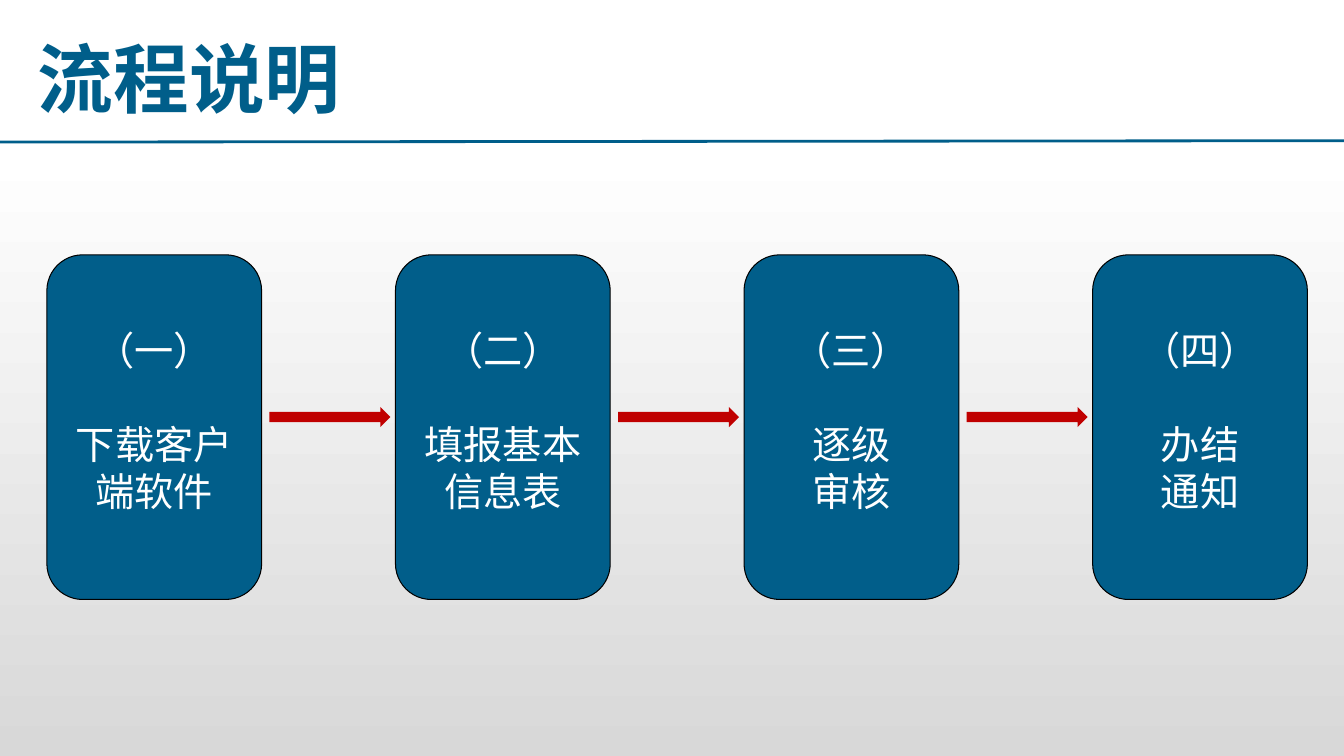
from pptx import Presentation
from pptx.dml.color import RGBColor
from pptx.enum.shapes import MSO_CONNECTOR as Connector, MSO_SHAPE as Shape
from pptx.enum.text import MSO_ANCHOR as Anchor, PP_ALIGN as Align
from pptx.oxml.ns import qn
from pptx.util import Pt
from lxml.etree import SubElement

TITLE_BLUE = RGBColor(0x00, 0x5E, 0x8A)
CARD_BLUE = RGBColor(0x01, 0x5E, 0x8A)
ARROW_RED = RGBColor(0xC0, 0x00, 0x00)
BLACK = RGBColor(0x00, 0x00, 0x00)
WHITE = RGBColor(0xFF, 0xFF, 0xFF)
GREY = RGBColor(0xD8, 0xD8, 0xD8)

WIDTH, HEIGHT = 960, 540
CARD_W, CARD_H, CARD_PITCH = 153.4, 246.2, 249
CAPTION_W, CAPTION_H, CAPTION_DROP = 126.7, 164.9, 26
ARROW_W, ARROW_H, ARROW_OFFSET, ARROW_DROP = 86.4, 14.4, 159, 108.7

TITLE_FONT = {"name": "Noto Sans CJK SC", "size": Pt(54), "bold": True}
CAPTION_FONT = {"name": "Arial", "size": Pt(28)}
TITLE_FRAME = {"word_wrap": True, "vertical_anchor": Anchor.BOTTOM}
CAPTION_FRAME = {"word_wrap": True, "margin_top": Pt(25)}

STEPS = [
    ("（一）", "下载客户端软件"),
    ("（二）", "填报基本", "信息表"),
    ("（三）", "逐级", "审核"),
    ("（四）", "办结", "通知"),
]


def apply(target, values):
    for name, value in values.items():
        setattr(target, name, value)


def add_text(slide, box, lines, frame_format, font_format, color, align):
    frame = slide.shapes.add_textbox(*map(Pt, box)).text_frame
    apply(frame, frame_format)
    frame.text = "\n".join(lines)
    for paragraph in frame.paragraphs:
        paragraph.alignment = align
        run = paragraph.runs[0]
        apply(run.font, font_format)
        run.font.color.rgb = color
        SubElement(run.font._element, qn("a:ea"), typeface=TITLE_FONT["name"])
    return frame


def add_solid(slide, kind, box, color):
    solid = slide.shapes.add_shape(kind, *map(Pt, box))
    solid.shadow.inherit = False
    solid.fill.solid()
    solid.fill.fore_color.rgb = color
    solid.line.fill.background()
    return solid


def paint_background(slide):
    fill = slide.background.fill
    fill.gradient()
    fill.gradient_angle = 270
    for stop, position, color in zip(fill.gradient_stops, (0.2, 1), (WHITE, GREY)):
        stop.position = position
        stop.color.rgb = color


def add_header(slide, left, top, width, height):
    add_text(slide, (left + 20, top + 11.5, 493, 80), ["流程说明"],
             TITLE_FRAME, TITLE_FONT, TITLE_BLUE, Align.LEFT)
    rule = slide.shapes.add_connector(
        Connector.STRAIGHT, Pt(left), Pt(top + height),
        Pt(left + width), Pt(top + height - 1))
    rule.line.color.rgb = TITLE_BLUE
    rule.line.width = Pt(2)
    SubElement(rule._element.spPr, qn("a:effectLst"))


def add_step(slide, left, top, lines):
    card = add_solid(slide, Shape.ROUNDED_RECTANGLE,
                     (left, top, CARD_W, CARD_H), CARD_BLUE)
    card.line.color.rgb = BLACK
    card.line.width = Pt(0.75)
    caption_left = left + (CARD_W - CAPTION_W) / 2
    frame = add_text(slide, (caption_left, top + CAPTION_DROP, CAPTION_W, CAPTION_H),
                     lines, CAPTION_FRAME, CAPTION_FONT, WHITE, Align.CENTER)
    for paragraph in frame.paragraphs:
        paragraph.line_spacing = Pt(33.6)
    frame.paragraphs[1].space_before = Pt(33.6)


def add_process(slide, left, top):
    for index, lines in enumerate(STEPS):
        step_left = left + index * CARD_PITCH
        add_step(slide, step_left, top, lines)
        if index < len(STEPS) - 1:
            add_solid(slide, Shape.RIGHT_ARROW,
                      (step_left + ARROW_OFFSET, top + ARROW_DROP, ARROW_W, ARROW_H),
                      ARROW_RED)


def main():
    deck = Presentation()
    apply(deck, {"slide_width": Pt(WIDTH), "slide_height": Pt(HEIGHT)})
    slide = deck.slides.add_slide(deck.slide_layouts[6])
    paint_background(slide)
    add_header(slide, 0, 0, WIDTH, 101.5)
    add_process(slide, 33.5, 182)
    deck.save("out.pptx")


if __name__ == "__main__":
    main()
